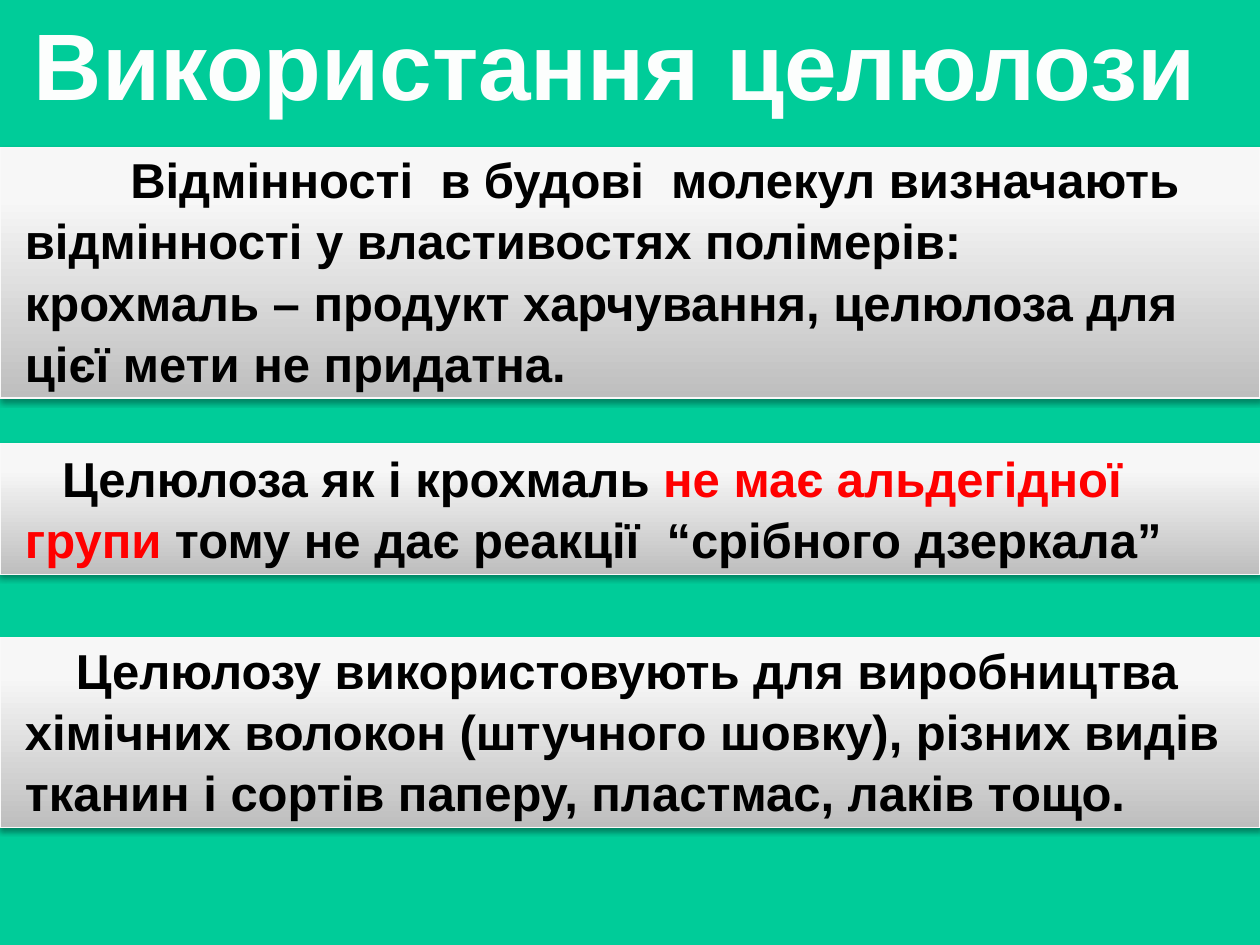
from lxml import etree
from pptx import Presentation
from pptx.dml.color import RGBColor
from pptx.enum import shapes, text
from pptx.oxml import parse_xml
from pptx.util import Pt

FONT = "Arial"
GREEN, WHITE, BLACK, RED = "00CC99", "FCFEFD", "000000", "FF0000"
BORDER = "F9F9F9"
GRADIENT = [(0, "BEBEBE"), (80, "F7F7F7"), (100, "F8F8F8")]
NS = 'xmlns:a="http://schemas.openxmlformats.org/drawingml/2006/main"'
SLIDE_WIDTH, SLIDE_HEIGHT = 720, 540

# Each band: top, height, first-line indent, coloured spans
BANDS = [
    (84.24, 143.28, 60.2, [
        ("Відмінності  в будові  молекул визначають відмінності у властивостях "
         "полімерів: \vкрохмаль – продукт харчування, целюлоза для цієї мети "
         "не придатна.", BLACK)]),
    (253.44, 74.88, 21.3, [
        ("Целюлоза як і крохмаль ", BLACK),
        ("не має альдегідної групи", RED),
        (" тому не дає реакції  “срібного дзеркала”", BLACK)]),
    (364.32, 108.72, 29.1, [
        ("Целюлозу використовують для виробництва хімічних волокон (штучного "
         "шовку), різних видів тканин і сортів паперу, пластмас, лаків тощо.",
         BLACK)]),
]


def color(value):
    return RGBColor.from_string(value)


def style_font(font, size, value):
    font.name = FONT
    font.size = Pt(size)
    font.bold = True
    font.color.rgb = color(value)


def add_gradient_and_shadow(shape):
    """Fill from bottom to top and cast a soft shadow below; needs a line already set."""
    stops = "".join(
        f'<a:gs pos="{position * 1000}"><a:srgbClr val="{value}"/></a:gs>'
        for position, value in GRADIENT)
    fill = parse_xml(
        f'<a:gradFill {NS} rotWithShape="1"><a:gsLst>{stops}</a:gsLst>'
        '<a:lin ang="16200000" scaled="0"/></a:gradFill>')
    shadow = parse_xml(
        f'<a:effectLst {NS}><a:outerShdw blurRad="{Pt(3.1)}" dist="{Pt(1.8)}" '
        'dir="5400000" rotWithShape="0"><a:srgbClr val="000000">'
        '<a:alpha val="35000"/></a:srgbClr></a:outerShdw></a:effectLst>')
    line = shape.line._get_or_add_ln()
    line.addprevious(fill)
    line.addnext(shadow)


def add_band(page, left, top, width, height, indent, spans):
    band = page.shapes.add_shape(
        shapes.MSO_SHAPE.RECTANGLE, Pt(left), Pt(top), Pt(width), Pt(height))
    band.line.color.rgb = color(BORDER)
    band.line.width = Pt(0.75)
    add_gradient_and_shadow(band)

    frame = band.text_frame
    frame.word_wrap = True
    frame.vertical_anchor = text.MSO_ANCHOR.BOTTOM
    para = frame.paragraphs[0]
    para.alignment = text.PP_ALIGN.LEFT
    para.line_spacing = 1.04
    properties = para._p.get_or_add_pPr()
    properties.set("marL", str(Pt(7.2)))
    properties.set("indent", str(Pt(indent)))
    for words, value in spans:
        for number, part in enumerate(words.split("\v")):
            if number:
                para.add_line_break()
            span = para.add_run()
            span.text = part
            style_font(span.font, 28, value)


def add_title(page, left, top, width, height):
    box = page.shapes.add_textbox(Pt(left), Pt(top), Pt(width), Pt(height))
    frame = box.text_frame
    frame.word_wrap = False
    frame.text = "Використання целюлози"
    para = frame.paragraphs[0]
    para.alignment = text.PP_ALIGN.CENTER
    style_font(para.runs[0].font, 54, WHITE)


def main():
    deck = Presentation()
    deck.slide_width, deck.slide_height = Pt(SLIDE_WIDTH), Pt(SLIDE_HEIGHT)
    page = deck.slides.add_slide(deck.slide_layouts[6])
    page.background.fill.solid()
    page.background.fill.fore_color.rgb = color(GREEN)
    for top, height, indent, spans in BANDS:
        add_band(page, 0, top, SLIDE_WIDTH, height, indent, spans)
    add_title(page, 8.64, 0, 685.44, 72.72)
    deck.save("out.pptx")


if __name__ == "__main__":
    main()
